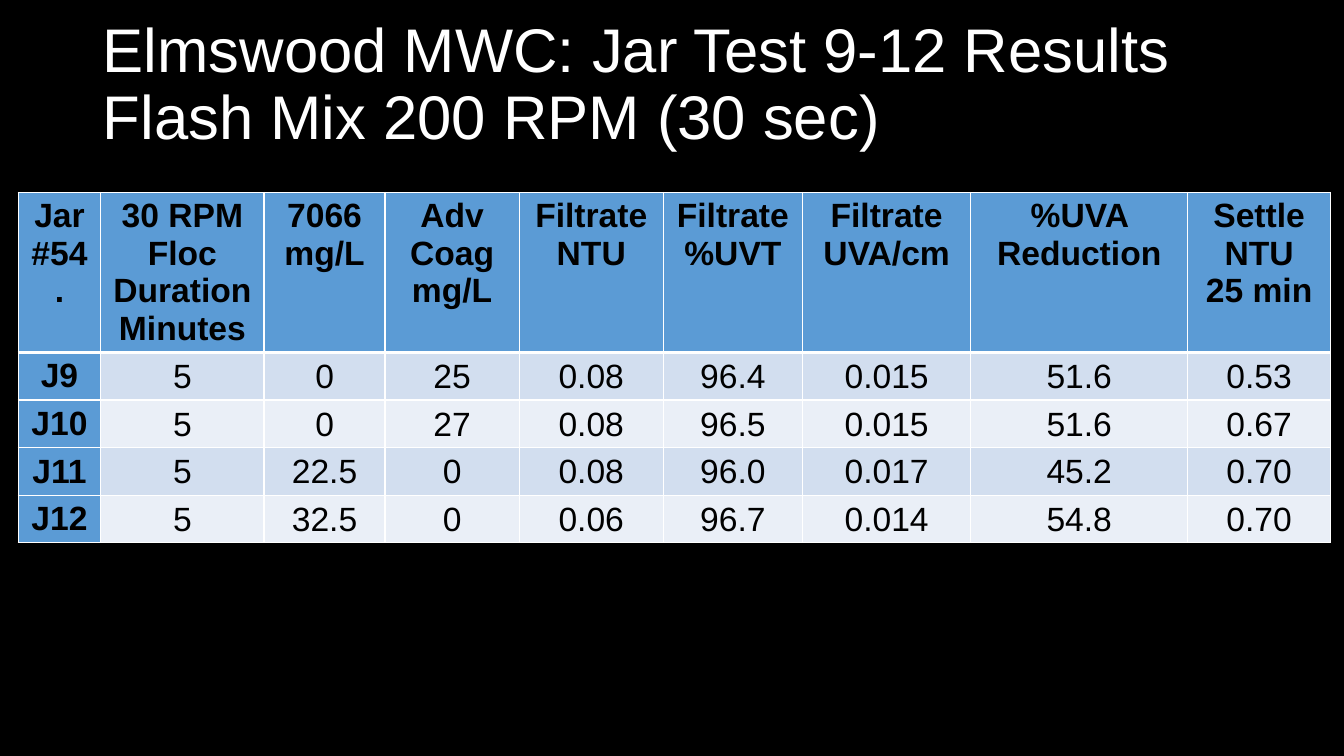
from dataclasses import dataclass

from lxml.etree import SubElement
from pptx import Presentation
from pptx.dml.color import RGBColor as RGB
from pptx.enum.text import MSO_ANCHOR as ANCHOR, MSO_AUTO_SIZE as AUTO, PP_ALIGN as ALIGN
from pptx.oxml.ns import qn
from pptx.util import Inches, Pt

TITLE = ["Elmswood MWC: Jar Test 9-12 Results", "Flash Mix 200 RPM (30 sec)"]
COLUMNS = [
    (0.82, ["Jar", "#54."]),
    (1.62, ["30 RPM", "Floc", "Duration", "Minutes"]),
    (1.2, ["7066", "mg/L"]),
    (1.33, ["Adv", "Coag", "mg/L"]),
    (1.43, ["Filtrate", "NTU"]),
    (1.38, ["Filtrate", "%UVT"]),
    (1.67, ["Filtrate", "UVA/cm"]),
    (2.15, ["%UVA Reduction"]),
    (1.42, ["Settle", "NTU", "25 min"]),
]
JARS = [
    ("J9", "5", "0", "25", "0.08", "96.4", "0.015", "51.6", "0.53"),
    ("J10", "5", "0", "27", "0.08", "96.5", "0.015", "51.6", "0.67"),
    ("J11", "5", "22.5", "0", "0.08", "96.0", "0.017", "45.2", "0.70"),
    ("J12", "5", "32.5", "0", "0.06", "96.7", "0.014", "54.8", "0.70"),
]
TITLE_BOX = (0.92, 0.13, 11.5, 1.45)
TABLE_LEFT, TABLE_TOP = 0.18, 1.91
HEADER_HEIGHT, ROW_HEIGHT = 1.58, 0.47


@dataclass(frozen=True)
class Theme:
    font: str = "Arial"
    title_size: int = 44
    cell_size: int = 24
    background: str = "000000"
    title: str = "FFFFFF"
    text: str = "000000"
    accent: str = "5B9BD5"
    bands: tuple = ("D2DEEF", "EAEFF7")
    border: str = "FFFFFF"
    thin: int = 1
    thick: int = 3


THEME = Theme()


def add_run(p, text, size, color, bold=False):
    r = p.add_run()
    r.text = text
    r.font.name = THEME.font
    r.font.size = Pt(size)
    r.font.bold = bold
    r.font.color.rgb = RGB.from_string(color)


def add_borders(cell, top, bottom):
    tc_pr = cell._tc.get_or_add_tcPr()
    widths = {"L": THEME.thin, "R": THEME.thin, "T": top, "B": bottom}
    for side, width in widths.items():
        ln = SubElement(tc_pr, qn(f"a:ln{side}"), w=str(Pt(width)))
        fill = SubElement(ln, qn("a:solidFill"))
        SubElement(fill, qn("a:srgbClr"), val=THEME.border)


def fill_cell(cell, lines, row, col):
    is_label = row == 0 or col == 0
    add_borders(
        cell,
        top=THEME.thick if row == 1 else THEME.thin,
        bottom=THEME.thick if row == 0 else THEME.thin,
    )
    cell.fill.solid()
    color = THEME.accent if is_label else THEME.bands[(row - 1) % 2]
    cell.fill.fore_color.rgb = RGB.from_string(color)
    if not is_label:
        cell.vertical_anchor = ANCHOR.MIDDLE
        cell.margin_left = cell.margin_top = cell.margin_right = Inches(0.01)
        cell.margin_bottom = 0
    tf = cell.text_frame
    for i, line in enumerate(lines):
        p = tf.add_paragraph() if i else tf.paragraphs[0]
        p.alignment = ALIGN.CENTER
        add_run(p, line, THEME.cell_size, THEME.text, is_label)


def add_title(s):
    sp = s.shapes.title
    sp.left, sp.top, sp.width, sp.height = map(Inches, TITLE_BOX)
    tf = sp.text_frame
    tf.word_wrap = True
    tf.auto_size = AUTO.NONE
    tf.vertical_anchor = ANCHOR.MIDDLE
    p = tf.paragraphs[0]
    p.alignment = ALIGN.LEFT
    p.line_spacing = 0.9
    for i, line in enumerate(TITLE):
        if i:
            p.add_line_break()
        add_run(p, line, THEME.title_size, THEME.title)


def add_results(s):
    widths, headers = zip(*COLUMNS)
    rows = [headers] + [[[value] for value in jar] for jar in JARS]
    heights = [HEADER_HEIGHT] + [ROW_HEIGHT] * len(JARS)
    box = map(Inches, (TABLE_LEFT, TABLE_TOP, sum(widths), sum(heights)))
    table = s.shapes.add_table(len(rows), len(widths), *box).table
    table.first_col = True
    for column, width in zip(table.columns, widths):
        column.width = Inches(width)
    for i, (row, height) in enumerate(zip(rows, heights)):
        table.rows[i].height = Inches(height)
        for j, lines in enumerate(row):
            fill_cell(table.cell(i, j), lines, i, j)


def main():
    prs = Presentation()
    prs.slide_width, prs.slide_height = Inches(13.33), Inches(7.5)
    s = prs.slides.add_slide(prs.slide_layouts[5])
    s.background.fill.solid()
    s.background.fill.fore_color.rgb = RGB.from_string(THEME.background)
    add_title(s)
    add_results(s)
    prs.save("out.pptx")


if __name__ == "__main__":
    main()
